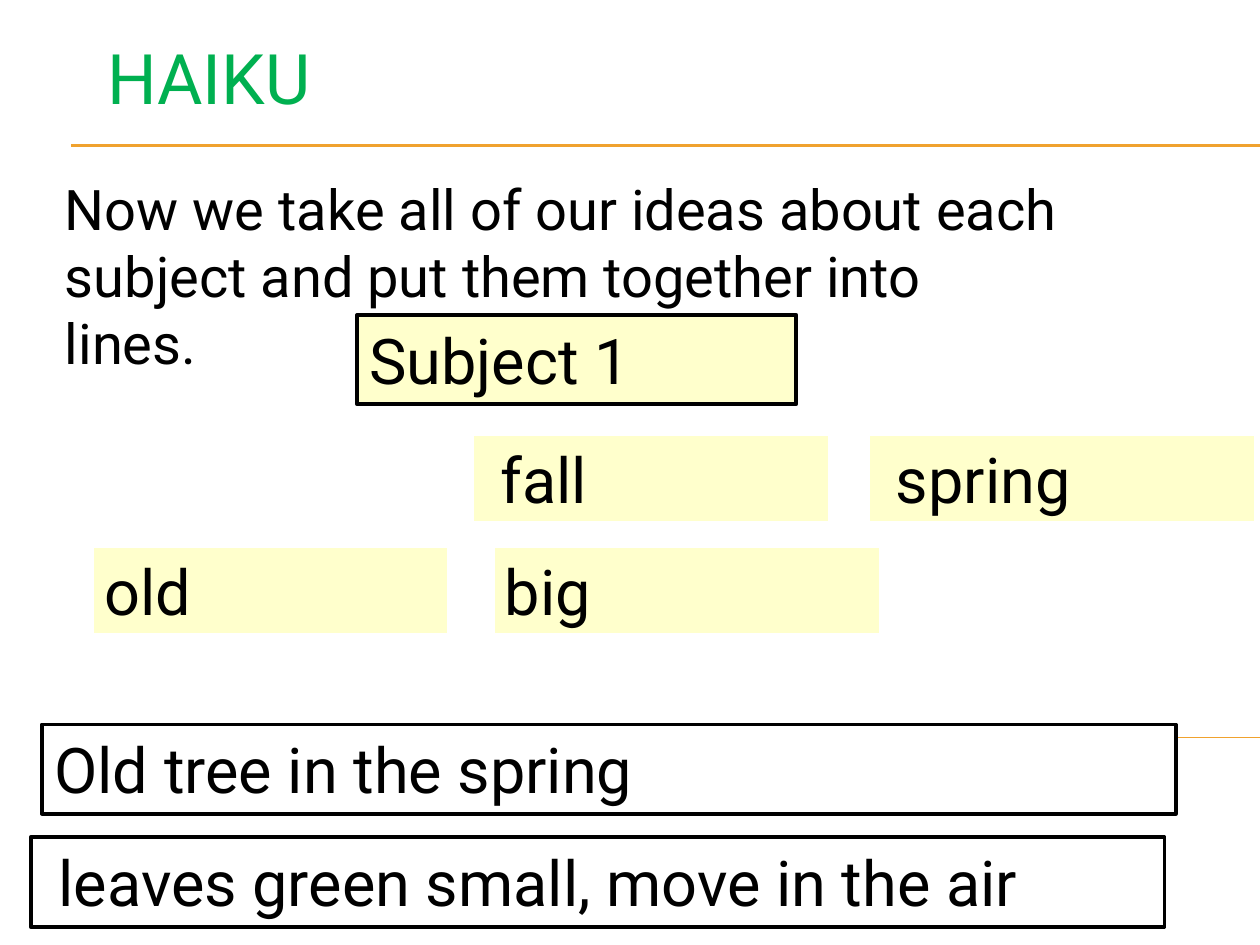
from pptx import Presentation
from pptx.enum.shapes import MSO_CONNECTOR, MSO_SHAPE
from pptx.enum.text import MSO_ANCHOR, PP_ALIGN
from pptx.dml.color import RGBColor
from pptx.oxml.ns import qn
from pptx.util import Pt
from lxml import etree

STRAIGHT = MSO_CONNECTOR.STRAIGHT
RECTANGLE = MSO_SHAPE.RECTANGLE
TOP, MIDDLE = MSO_ANCHOR.TOP, MSO_ANCHOR.MIDDLE
LEFT = PP_ALIGN.LEFT

COLORS = {
    "black": "000000",
    "white": "FFFFFF",
    "green": "00B050",
    "cream": "FFFFCC",
    "amber": "F0A22E",
}
PAGE_WIDTH, PAGE_HEIGHT = 720, 540
BOX_HEIGHT = 51
INSET, INDENTED = 7.2, 16


def color(name):
    return RGBColor.from_string(COLORS[name])


class HaikuSlide:
    """Holds the text style and the slide being built."""

    font_name = "Roboto"

    def __init__(self, deck):
        self.page = deck.slides.add_slide(deck.slide_layouts[5])

    def set_text(self, shape, text, size, ink="black", anchor=TOP, inset=INSET, spacing=None):
        frame = shape.text_frame
        frame_format = {
            "word_wrap": True,
            "vertical_anchor": anchor,
            "margin_left": Pt(inset),
            "margin_right": Pt(INSET),
            "margin_top": Pt(3.6),
            "margin_bottom": Pt(3.6),
        }
        for name, value in frame_format.items():
            setattr(frame, name, value)
        frame.text = text
        para = frame.paragraphs[0]
        para.alignment = LEFT
        para.line_spacing = spacing
        for span in para.runs:
            span.font.name = self.font_name
            span.font.size = Pt(size)
            span.font.color.rgb = color(ink)

    def title(self, text, left, top, width, height):
        shape = self.page.shapes.title
        place = {"left": left, "top": top, "width": width, "height": height}
        for name, value in place.items():
            setattr(shape, name, Pt(value))
        self.set_text(shape, text, 39.8, ink="green", anchor=MIDDLE, spacing=0.8)

    def rule(self, top):
        """Draw a thin horizontal line that runs to the right edge."""
        line = self.page.shapes.add_connector(
            STRAIGHT, Pt(40.5), Pt(top), Pt(PAGE_WIDTH), Pt(top))
        line.line.color.rgb = color("amber")
        line.line.width = Pt(0.75)
        etree.SubElement(line._element.spPr, qn("a:effectLst"))

    def paragraph(self, text, left, top, width, height):
        box = self.page.shapes.add_textbox(Pt(left), Pt(top), Pt(width), Pt(height))
        self.set_text(box, text, 32)

    def box(self, text, left, top, width, fill, outline, inset=INSET):
        box = self.page.shapes.add_shape(
            RECTANGLE, Pt(left), Pt(top), Pt(width), Pt(BOX_HEIGHT))
        box.shadow.inherit = False
        box.fill.solid()
        box.fill.fore_color.rgb = color(fill)
        box.line.color.rgb = color(outline)
        box.line.width = Pt(2.25)
        self.set_text(box, text, 36, inset=inset)


def main():
    deck = Presentation()
    deck.slide_width, deck.slide_height = Pt(PAGE_WIDTH), Pt(PAGE_HEIGHT)
    haiku = HaikuSlide(deck)

    haiku.title("HAIKU", 54, 24, 612, 48)
    for top in (82.8, 83.5, 421.5):
        haiku.rule(top)
    haiku.paragraph(
        "Now we take all of our ideas about each\v"
        "subject and put them together into\vlines.",
        30, 96, 587, 85)

    haiku.box("Subject 1", 204, 180, 251, "cream", "black")
    haiku.box("Old tree in the spring", 24, 414, 648, "white", "black")
    haiku.box("leaves green small, move in the air", 17.5, 478.5, 648,
              "white", "black", INDENTED)

    idea_words = [
        ("spring", 496, 248, 222, INDENTED),
        ("fall", 270, 248, 204, INDENTED),
        ("big", 281.5, 312, 222, INSET),
        ("old", 52.5, 312, 204, INSET),
    ]
    for word, left, top, width, inset in idea_words:
        haiku.box(word, left, top, width, "cream", "white", inset)

    deck.save("out.pptx")


if __name__ == "__main__":
    main()
